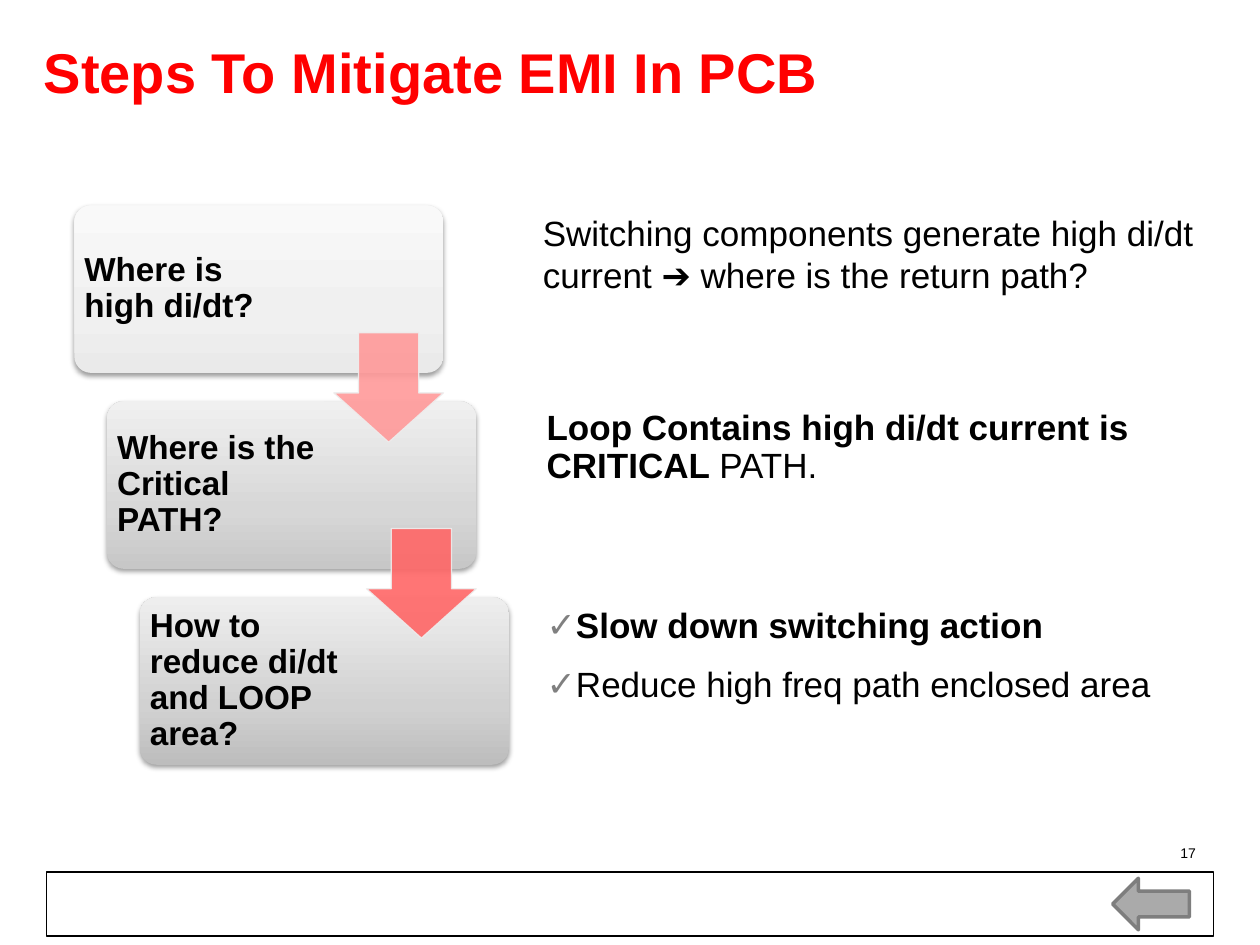
import pptx
import pptx.util
import pptx.dml.color
import pptx.enum.shapes
import pptx.enum.text
import pptx.oxml
import pptx.oxml.ns

Inches = pptx.util.Inches
Pt = pptx.util.Pt
RGBColor = pptx.dml.color.RGBColor
Shape = pptx.enum.shapes.MSO_SHAPE
Align = pptx.enum.text.PP_ALIGN
Anchor = pptx.enum.text.MSO_ANCHOR

BLACK = RGBColor(0x00, 0x00, 0x00)
RED = RGBColor(0xFF, 0x00, 0x00)
PINK = RGBColor(0xFF, 0x99, 0x99)
CORAL = RGBColor(0xFF, 0x66, 0x66)
PALE_GRAY = RGBColor(0xEE, 0xEE, 0xEE)
CHECK_GRAY = RGBColor(0x80, 0x80, 0x80)
BUTTON_FILL = RGBColor(0xAA, 0xAA, 0xAA)
BUTTON_LINE = RGBColor(0x7E, 0x7E, 0x7E)
NAMESPACE = pptx.oxml.ns.nsdecls("a")


class SlideBuilder:
    font_name = "Arial"

    def __init__(self, slide):
        self.slide = slide

    def add_shape(self, kind, box, fill=None, line=None, line_width=0.75,
                  adjustments=(), alpha=None):
        shape = self.slide.shapes.add_shape(kind, *map(Inches, box))
        shape.shadow.inherit = False
        for index, value in enumerate(adjustments):
            shape.adjustments[index] = value
        if fill is None:
            shape.fill.background()
        else:
            shape.fill.solid()
            shape.fill.fore_color.rgb = fill
        if line is None:
            shape.line.fill.background()
        else:
            shape.line.color.rgb = line
            shape.line.width = Pt(line_width)
        if alpha is not None:
            for color in shape._element.spPr.iter(pptx.oxml.ns.qn("a:srgbClr")):
                color.append(pptx.oxml.parse_xml(
                    f'<a:alpha {NAMESPACE} val="{alpha * 1000}"/>'))
        return shape

    def add_card(self, box, colors):
        """Rounded card with a bottom-to-top gradient and a soft shadow."""
        shape = self.add_shape(Shape.ROUNDED_RECTANGLE, box, adjustments=[0.1])
        shape.fill.gradient()
        shape.fill.gradient_angle = 90
        properties = shape._element.spPr
        stops = properties.find(".//" + pptx.oxml.ns.qn("a:gsLst"))
        for stop in list(stops):
            stops.remove(stop)
        for position, color in zip((0, 35, 100), colors):
            stops.append(pptx.oxml.parse_xml(
                f'<a:gs {NAMESPACE} pos="{position * 1000}">'
                f'<a:srgbClr val="{color}"/></a:gs>'))
        effects = properties.find(pptx.oxml.ns.qn("a:effectLst"))
        effects.append(pptx.oxml.parse_xml(
            f'<a:outerShdw {NAMESPACE} blurRad="{Pt(3.1)}" dist="{Pt(1.6)}" '
            'dir="5400000" rotWithShape="0"><a:srgbClr val="000000">'
            '<a:alpha val="38000"/></a:srgbClr></a:outerShdw>'))

    def add_text(self, box, paragraphs, size, color=BLACK, anchor=Anchor.TOP,
                 align=Align.LEFT, spacing=1.0, before=0, margins=(0.1, 0.05),
                 bullet=None):
        """Each paragraph is a list of (text, bold) runs."""
        frame = self.slide.shapes.add_textbox(*map(Inches, box)).text_frame
        frame.word_wrap = True
        frame.vertical_anchor = anchor
        frame.margin_left = frame.margin_right = Inches(margins[0])
        frame.margin_top = frame.margin_bottom = Inches(margins[1])
        for index, runs in enumerate(paragraphs):
            paragraph = frame.add_paragraph() if index else frame.paragraphs[0]
            paragraph.alignment = align
            paragraph.line_spacing = spacing
            if index:
                paragraph.space_before = Pt(before)
            if bullet:
                self.add_bullet(paragraph, bullet)
            for text, bold in runs:
                run = paragraph.add_run()
                run.text = text
                run.font.name = self.font_name
                run.font.size = Pt(size)
                run.font.bold = bold
                run.font.color.rgb = color

    def add_bullet(self, paragraph, character):
        properties = paragraph._p.get_or_add_pPr()
        properties.set("marL", str(Inches(0.23)))
        properties.set("indent", str(-Inches(0.23)))
        properties.append(pptx.oxml.parse_xml(
            f'<a:buClr {NAMESPACE}><a:srgbClr val="{CHECK_GRAY}"/></a:buClr>'))
        properties.append(pptx.oxml.parse_xml(
            f'<a:buFont {NAMESPACE} typeface="{self.font_name}"/>'))
        properties.append(pptx.oxml.parse_xml(
            f'<a:buChar {NAMESPACE} char="{character}"/>'))


def main():
    presentation = pptx.Presentation()
    presentation.slide_width = Inches(10)
    presentation.slide_height = Inches(7.5)
    builder = SlideBuilder(
        presentation.slides.add_slide(presentation.slide_layouts[6]))

    # Footer frame, title and slide number
    builder.add_shape(Shape.RECTANGLE, (0.37, 6.92, 9.26, 0.51), line=BLACK)
    builder.add_text((0.25, 0.16, 9.25, 0.89),
                     [[("Steps To Mitigate EMI In PCB", True)]], 32, RED,
                     anchor=Anchor.MIDDLE, spacing=0.85)
    builder.add_text((7.26, 6.65, 2.33, 0.23), [[("17", False)]], 8,
                     align=Align.RIGHT)

    # Staircase of question cards
    steps = [
        ("Where is high di/dt?", 1.57, ("EAEAEA", "F0F0F0", "F9F9F9")),
        ("Where is the Critical PATH?", 1.8, ("C7C7C7", "D7D7D7", "F0F0F0")),
        ("How to reduce di/dt and LOOP area?", 1.8,
         ("BDBDBD", "D1D1D1", "EEEEEE")),
    ]
    step_right, step_down = 0.26, 1.555
    for index, (question, text_width, colors) in enumerate(steps):
        left = 0.59 + index * step_right
        top = 1.63 + index * step_down
        builder.add_card((left, top, 2.93, 1.33), colors)
        builder.add_text((left, top, text_width, 1.33), [[(question, True)]],
                         19, anchor=Anchor.MIDDLE, spacing=0.9,
                         margins=(0.08, 0.08))

    # Arrows between the cards
    for index, color in enumerate((PINK, CORAL)):
        builder.add_shape(Shape.DOWN_ARROW,
                          (2.65 + index * step_right, 2.64 + index * step_down,
                           0.87, 0.87),
                          color, PALE_GRAY, adjustments=(0.55, 0.45), alpha=90)

    # Answers beside the cards
    builder.add_text((4.21, 1.63, 5.4, 1.31),
                     [[("Switching components generate high di/dt current ➔ "
                        "where is the return path?", False)]], 20)
    builder.add_text((4.24, 3.21, 5.4, 1.28),
                     [[("Loop Contains high di/dt current is CRITICAL ", True),
                       ("PATH.", False)]], 20, spacing=0.9)
    builder.add_text((4.24, 4.78, 5.4, 1.23),
                     [[("Slow down switching action", True)],
                      [("Reduce high freq path enclosed area", False)]],
                     20, spacing=0.9, before=12, bullet="✓")

    # Back button
    builder.add_shape(Shape.LEFT_ARROW, (8.83, 6.97, 0.61, 0.41),
                      BUTTON_FILL, BUTTON_LINE, line_width=2)

    presentation.save("out.pptx")


if __name__ == "__main__":
    main()
